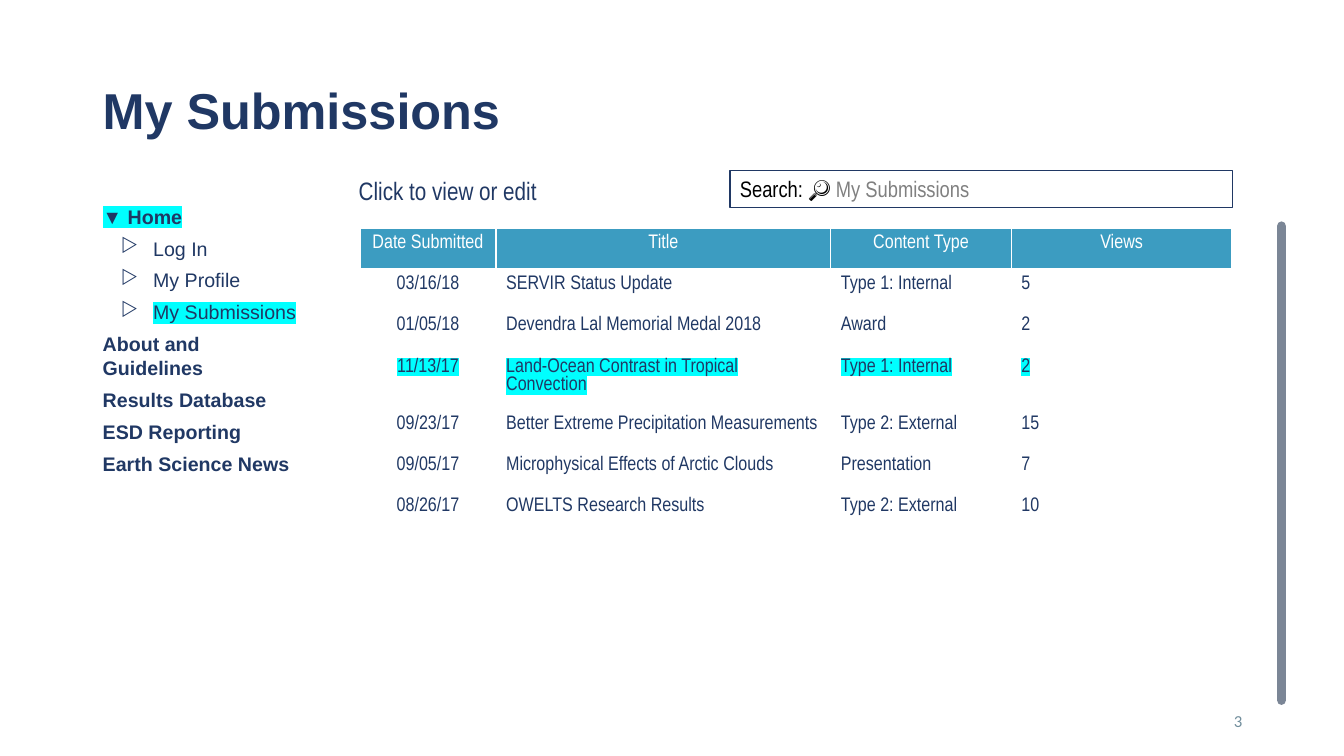
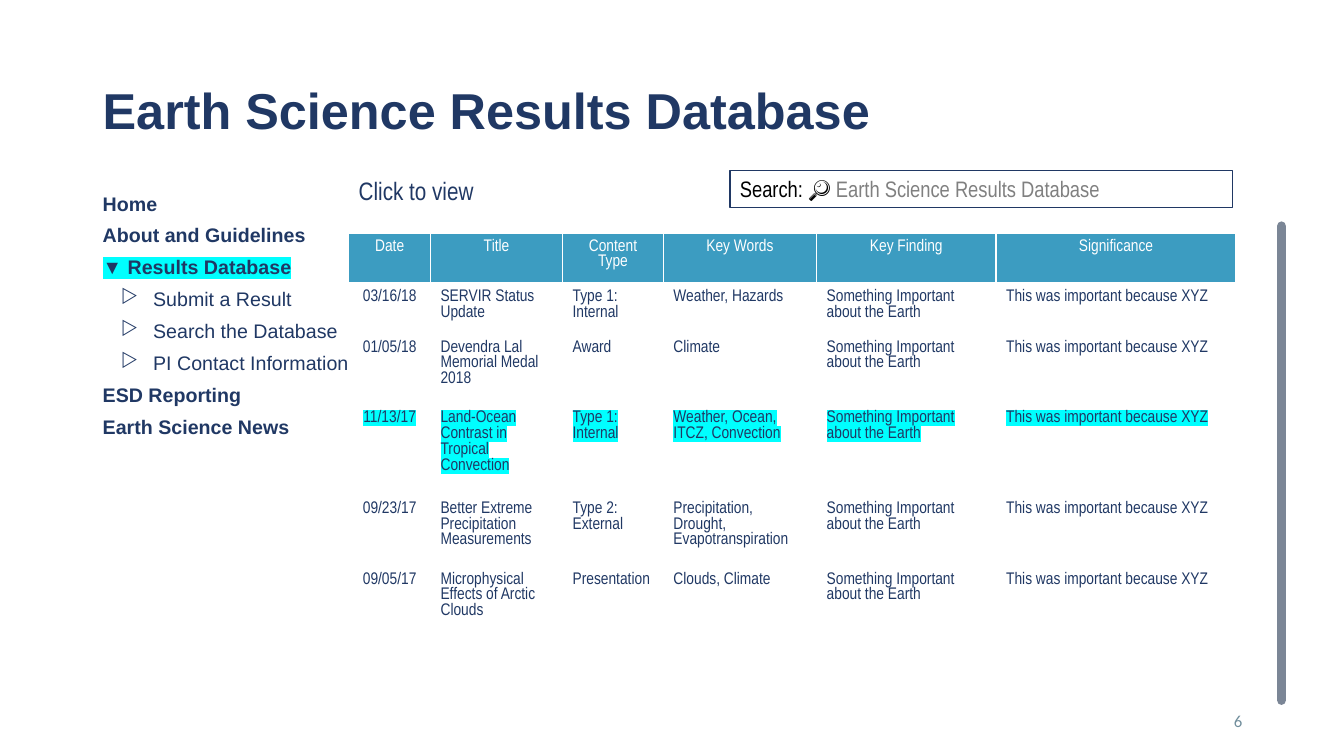
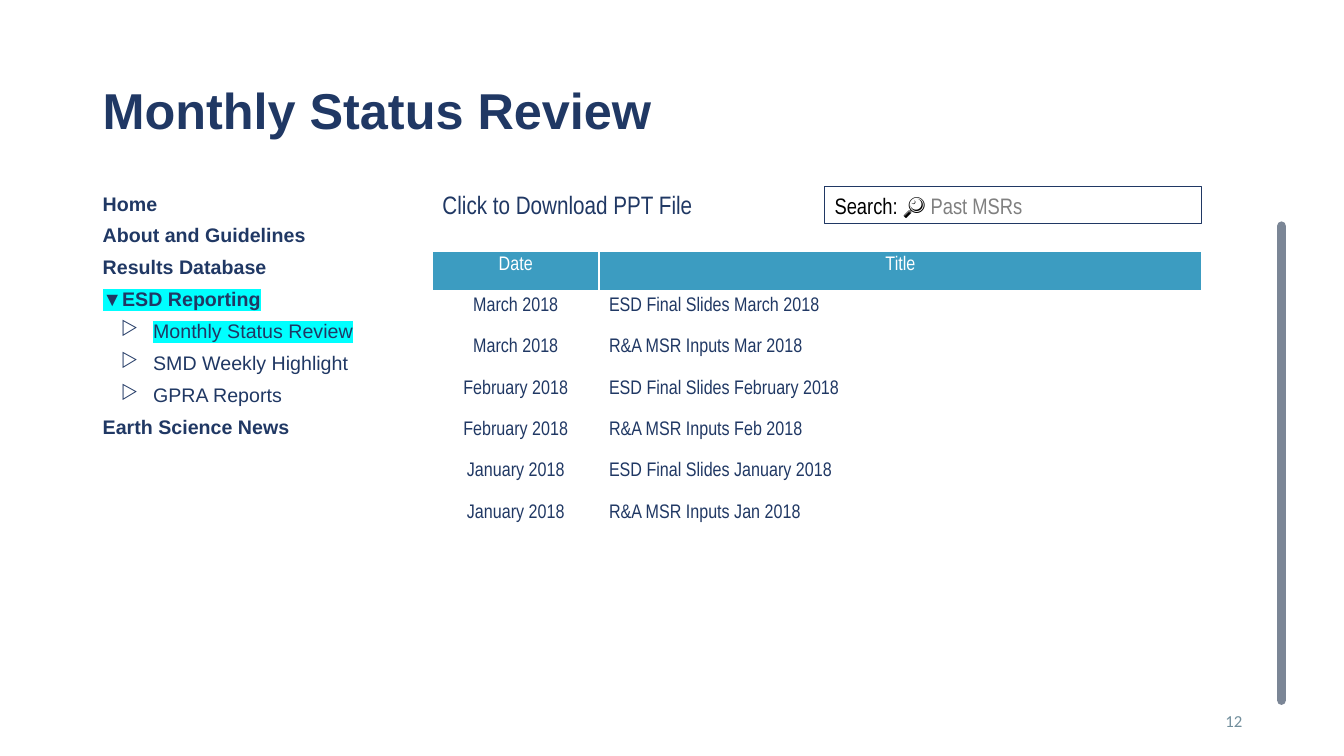
from lxml import etree
from pptx import Presentation
from pptx.dml.color import RGBColor
from pptx.enum import shapes, text
from pptx.oxml import ns
from pptx.util import Inches, Pt

NAVY, TEAL, WHITE, BLACK = "203864", "3C9CC1", "FFFFFF", "000000"
GRAY, SLATE, PAGE_GRAY, CYAN = "808080", "44546A", "718E9C", "00FFFF"
SANS, NARROW, NUMBER_FONT = "Arial", "Arial Narrow", "Calibri"
CENTER, RIGHT = text.PP_ALIGN.CENTER, text.PP_ALIGN.RIGHT
MIDDLE, TOP = text.MSO_ANCHOR.MIDDLE, text.MSO_ANCHOR.TOP

# Section: (marker when open, pages)
SITE_MAP = {
    "Home": ("▼ ", ["Log In", "My Profile", "My Submissions"]),
    "About and Guidelines": ("", []),
    "Results Database": (
        "▼ ", ["Submit a Result", "Search the Database", "PI Contact Information"]),
    "ESD Reporting": (
        "▼", ["Monthly Status Review", "SMD Weekly Highlight", "GPRA Reports"]),
    "Earth Science News": ("", []),
}


def rgb(color):
    return RGBColor.from_string(color)


def add_xml(parent, tag, **attributes):
    return etree.SubElement(parent, ns.qn(tag), attributes)


def add_run(paragraph, words, size, color, font=NARROW, bold=False, highlight=False):
    run = paragraph.add_run()
    run.text = words
    run.font.size, run.font.bold = Pt(size), bold
    run.font.color.rgb = rgb(color)
    if highlight:
        mark = add_xml(run.font._element, "a:highlight")
        add_xml(mark, "a:srgbClr", val=CYAN)
    run.font.name = font


def add_text_frame(slide, left, top, width, height, anchor=TOP):
    box = slide.shapes.add_textbox(*map(Inches, (left, top, width, height)))
    frame = box.text_frame
    frame.word_wrap, frame.vertical_anchor = True, anchor
    return frame


def add_title(slide, title):
    heading = add_text_frame(slide, 0.92, 0.4, 11.5, 1.45, MIDDLE).paragraphs[0]
    heading.line_spacing = 0.9
    add_run(heading, title, 36, NAVY, SANS, bold=True)


def add_page_number(slide, number):
    footer = add_text_frame(slide, 9.42, 6.95, 3, 0.4, MIDDLE).paragraphs[0]
    footer.alignment = RIGHT
    add_run(footer, str(number), 12, PAGE_GRAY, NUMBER_FONT)


def add_scroll_bar(slide):
    x = Inches(12.71)
    bar = slide.shapes.add_connector(
        shapes.MSO_CONNECTOR.STRAIGHT, x, Inches(2.24), x, Inches(6.95))
    bar.line.width = Pt(6.25)
    bar.line.color.rgb = rgb(SLATE)
    line = bar.line._get_or_add_ln()
    line.set("cap", "rnd")
    add_xml(line.find(".//" + ns.qn("a:srgbClr")), "a:alpha", val="69000")
    add_xml(bar._element.spPr, "a:effectLst")


def add_menu(slide, top, width, open_section, open_page=None):
    """Site menu with one section unfolded and the current entries highlighted."""
    frame = add_text_frame(slide, 0.92, top, width, 2.57)
    entries = []
    for section, (marker, pages) in SITE_MAP.items():
        is_open = section == open_section
        entries.append((marker + section if is_open else section, False, is_open))
        if is_open:
            entries += [(page, True, page == open_page) for page in pages]
    for index, (label, is_page, current) in enumerate(entries):
        entry = frame.add_paragraph() if index else frame.paragraphs[0]
        entry.space_after = Pt(6)
        if is_page:
            properties = entry._p.get_or_add_pPr()
            properties.set("marL", str(Inches(0.5)))
            properties.set("indent", str(Inches(-0.32)))
            add_xml(properties, "a:buChar", char="▷")
        add_run(entry, label, 14, NAVY, SANS, bold=not is_page, highlight=current)


def add_hint(slide, left, top, hint):
    add_run(add_text_frame(slide, left, top, 3.4, 0.4).paragraphs[0], hint, 18, NAVY)


def add_search_box(slide, left, top, width, scope):
    box = slide.shapes.add_shape(
        shapes.MSO_SHAPE.RECTANGLE, *map(Inches, (left, top, width, 0.37)))
    box.shadow.inherit = False
    box.fill.background()
    box.line.color.rgb, box.line.width = rgb(NAVY), Pt(0.75)
    box.text_frame.word_wrap = True
    box.text_frame.vertical_anchor = MIDDLE
    query = box.text_frame.paragraphs[0]
    query.alignment = text.PP_ALIGN.LEFT
    add_run(query, "Search: 🔎 ", 16, BLACK)
    add_run(query, scope, 16, GRAY)


def style_cell(cell, is_header):
    properties = cell._tc.get_or_add_tcPr()
    for side in "LRTB":
        width = 3 if is_header and side == "B" else 1
        border = add_xml(properties, "a:ln" + side, w=str(Pt(width)))
        add_xml(add_xml(border, "a:solidFill"), "a:srgbClr", val=WHITE)
    if is_header:
        cell.fill.solid()
        cell.fill.fore_color.rgb = rgb(TEAL)
    else:
        cell.fill.background()


def add_listing(slide, left, top, column_widths, row_heights, rows, size,
                highlighted_row=None):
    """Table with a header row, centred first column and one marked row."""
    table = slide.shapes.add_table(
        len(rows), len(column_widths), Inches(left), Inches(top),
        Inches(sum(column_widths)), Inches(sum(row_heights))).table
    table.horz_banding = False
    for column, width in zip(table.columns, column_widths):
        column.width = Inches(width)
    for row, height in zip(table.rows, row_heights):
        row.height = Inches(height)
    for r, values in enumerate(rows):
        for c, value in enumerate(values):
            cell = table.cell(r, c)
            style_cell(cell, r == 0)
            paragraph = cell.text_frame.paragraphs[0]
            if r == 0 or c == 0:
                paragraph.alignment = CENTER
            add_run(paragraph, value, size, NAVY if r else WHITE,
                    highlight=r == highlighted_row)


def start_page(deck, title, number):
    slide = deck.slides.add_slide(deck.slide_layouts[6])
    add_title(slide, title)
    add_page_number(slide, number)
    add_scroll_bar(slide)
    return slide


def build_submissions(deck):
    slide = start_page(deck, "My Submissions", 3)
    add_menu(slide, 1.98, 2.21, "Home", "My Submissions")
    add_hint(slide, 3.46, 1.69, "Click to view or edit")
    add_search_box(slide, 7.24, 1.69, 4.98, "My Submissions")
    rows = [
        ("Date Submitted", "Title", "Content Type", "Views"),
        ("03/16/18", "SERVIR Status Update", "Type 1: Internal", "5"),
        ("01/05/18", "Devendra Lal Memorial Medal 2018", "Award", "2"),
        ("11/13/17", "Land-Ocean Contrast in Tropical Convection",
         "Type 1: Internal", "2"),
        ("09/23/17", "Better Extreme Precipitation Measurements",
         "Type 2: External", "15"),
        ("09/05/17", "Microphysical Effects of Arctic Clouds", "Presentation", "7"),
        ("08/26/17", "OWELTS Research Results", "Type 2: External", "10"),
    ]
    add_listing(slide, 3.57, 2.27, [1.35, 3.32, 1.79, 2.19], [0.41] * len(rows),
                rows, 14, highlighted_row=3)


def build_results(deck):
    slide = start_page(deck, "Earth Science Results Database", 6)
    add_menu(slide, 1.85, 3.08, "Results Database")
    add_hint(slide, 3.46, 1.69, "Click to view")
    add_search_box(slide, 7.24, 1.69, 4.98, "Earth Science Results Database")
    results = [
        ("03/16/18", "SERVIR Status Update", "Type 1: Internal", "Weather, Hazards"),
        ("01/05/18", "Devendra Lal Memorial Medal 2018", "Award", "Climate"),
        ("11/13/17", "Land-Ocean Contrast in Tropical Convection",
         "Type 1: Internal", "Weather, Ocean, ITCZ, Convection"),
        ("09/23/17", "Better Extreme Precipitation Measurements",
         "Type 2: External", "Precipitation, Drought, Evapotranspiration"),
        ("09/05/17", "Microphysical Effects of Arctic Clouds",
         "Presentation", "Clouds, Climate"),
    ]
    finding = ("Something Important about the Earth", "This was important because XYZ")
    header = ("Date", "Title", "Content Type", "Key Words", "Key Finding",
              "Significance")
    rows = [header] + [result + finding for result in results]
    add_listing(slide, 3.46, 2.32, [0.81, 1.31, 1, 1.52, 1.78, 2.38],
                [0.49, 0.5, 0.7, 0.9, 0.7, 0.7], rows, 12, highlighted_row=3)


def build_status_review(deck):
    slide = start_page(deck, "Monthly Status Review", 12)
    add_menu(slide, 1.85, 3.08, "ESD Reporting", "Monthly Status Review")
    add_hint(slide, 4.29, 1.83, "Click to Download PPT File")
    add_search_box(slide, 8.18, 1.85, 3.74, "Past MSRs")
    rows = [("Date", "Title")]
    for month, short in (("March", "Mar"), ("February", "Feb"), ("January", "Jan")):
        rows += [(f"{month} 2018", f"ESD Final Slides {month} 2018"),
                 (f"{month} 2018", f"R&A MSR Inputs {short} 2018")]
    add_listing(slide, 4.29, 2.49, [1.65, 5.98], [0.41] * len(rows), rows, 14)


def main():
    deck = Presentation()
    deck.slide_width, deck.slide_height = Inches(13.33), Inches(7.5)
    build_submissions(deck)
    build_results(deck)
    build_status_review(deck)
    deck.save("out.pptx")


if __name__ == "__main__":
    main()
